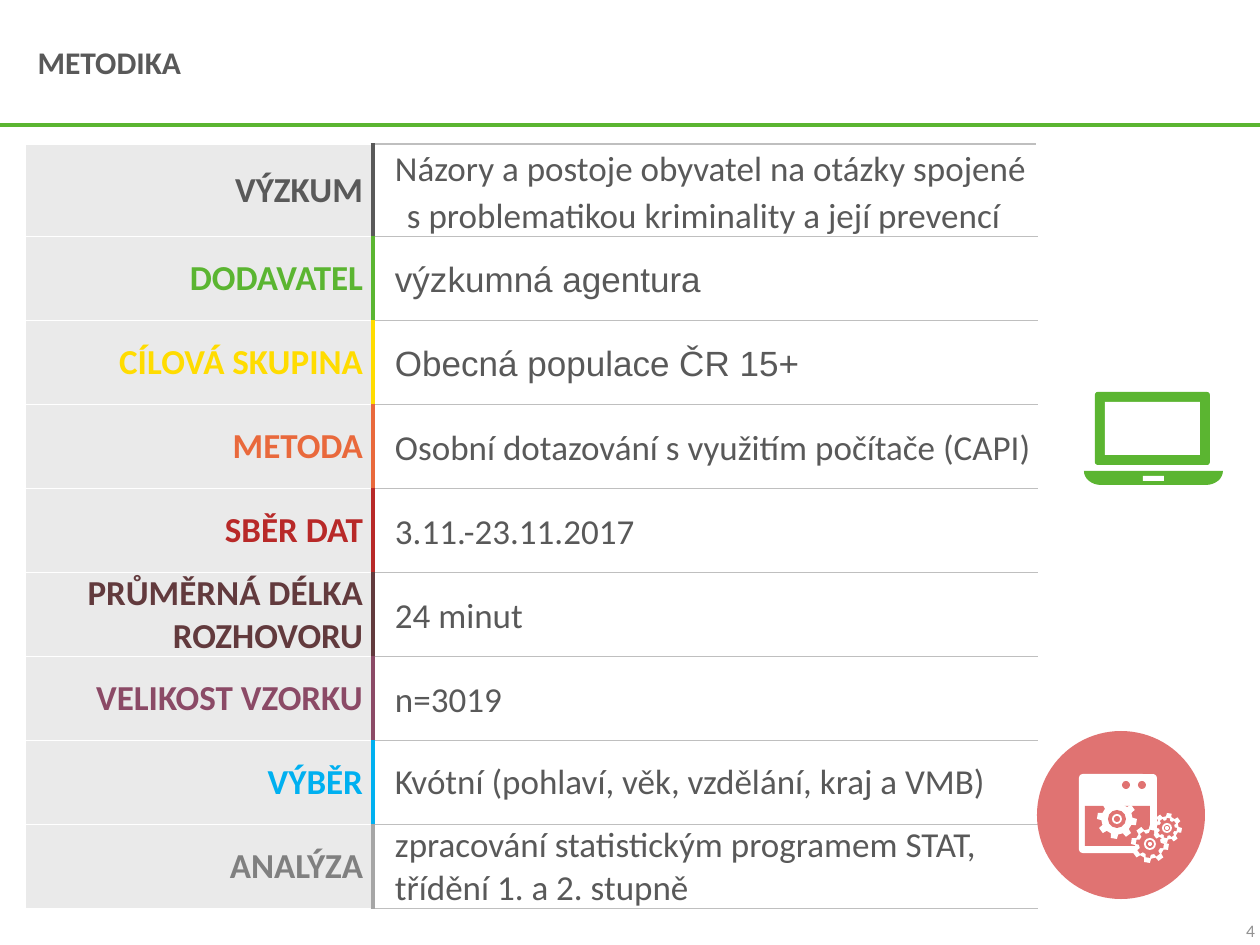
from math import cos, pi, sin

from lxml import etree
from pptx import Presentation
from pptx.dml.color import RGBColor
from pptx.enum.shapes import MSO_CONNECTOR, MSO_SHAPE
from pptx.enum.text import MSO_ANCHOR, PP_ALIGN
from pptx.oxml.ns import qn
from pptx.util import Pt

PX = 914400 // 126
LEFT, RIGHT = PP_ALIGN.LEFT, PP_ALIGN.RIGHT
MIDDLE = MSO_ANCHOR.MIDDLE
OVAL, RECT, ROUND = MSO_SHAPE.OVAL, MSO_SHAPE.RECTANGLE, MSO_SHAPE.ROUNDED_RECTANGLE

DARK = RGBColor(0x59, 0x59, 0x59)
GREEN = RGBColor(0x5B, 0xB5, 0x31)
YELLOW = RGBColor(0xFF, 0xDC, 0x00)
ORANGE = RGBColor(0xE9, 0x69, 0x3C)
RED = RGBColor(0xB8, 0x29, 0x28)
BROWN = RGBColor(0x62, 0x3A, 0x3D)
PLUM = RGBColor(0x8B, 0x4A, 0x66)
BLUE = RGBColor(0x00, 0xB0, 0xF0)
GRAY = RGBColor(0x80, 0x80, 0x80)
SILVER = RGBColor(0xA6, 0xA6, 0xA6)
RULE = RGBColor(0xBF, 0xBF, 0xBF)
PALE = RGBColor(0xEA, 0xEA, 0xEA)
NUMBER = RGBColor(0x93, 0x93, 0x93)
CORAL = RGBColor(0xE0, 0x73, 0x72)
WHITE = RGBColor(0xFF, 0xFF, 0xFF)

TITLE = "METODIKA"
PAGE = "4"
HANG = dict(indent=24, hang=12, spacing=1.1)
SANS = dict(HANG, font="Arial")
# label, label colour, bar colour, value, value format
ROWS = [
    ("VÝZKUM", DARK, DARK, "Názory a postoje obyvatel na otázky spojené "
     "s problematikou kriminality a její prevencí", HANG),
    ("DODAVATEL", GREEN, GREEN, "výzkumná agentura", SANS),
    ("CÍLOVÁ SKUPINA", YELLOW, YELLOW, "Obecná populace ČR 15+", SANS),
    ("METODA", ORANGE, ORANGE, "Osobní dotazování s využitím počítače (CAPI)", HANG),
    ("SBĚR DAT", RED, RED, "3.11.-23.11.2017", HANG),
    ("PRŮMĚRNÁ DÉLKA ROZHOVORU", BROWN, BROWN, "24 minut", HANG),
    ("VELIKOST VZORKU", PLUM, PLUM, "n=3019", HANG),
    ("VÝBĚR", BLUE, BLUE, "Kvótní (pohlaví, věk, vzdělání, kraj a VMB)",
     dict(indent=24, hang=12)),
    ("ANALÝZA", GRAY, SILVER, "zpracování statistickým programem STAT, "
     "třídění 1. a 2. stupně", dict(indent=12)),
]
WIDTHS = (348, 664)
STEP = 84

# centre x, centre y, tooth radius, body radius, ring radius, hole radius, dot radius
SMALL = [(1150, 844, 19, 14, 6, 4, 2), (1167, 828, 15, 10, 5, 3, 2)]


def write(frame, text, size=20, color=DARK, bold=False, font="Calibri", align=LEFT,
          spacing=None, indent=0, hang=0):
    para = frame.paragraphs[0]
    para.alignment = align
    if spacing:
        para.line_spacing = spacing
    if indent:
        props = para._p.get_or_add_pPr()
        props.set("marL", str(indent * PX))
        props.set("indent", str(-hang * PX))
    run = para.add_run()
    run.text = text
    run.font.size, run.font.name, run.font.bold = Pt(size), font, bold
    run.font.color.rgb = color


def inset(box, left=0, right=0):
    box.margin_left, box.margin_right = left * PX, right * PX
    box.margin_top = box.margin_bottom = 0


def border(cell, **sides):
    props = cell._tc.get_or_add_tcPr()
    for side in "LRTB":
        if side in sides:
            color, width = sides[side]
            line = etree.SubElement(props, qn("a:ln" + side), w=str(Pt(width)))
            fill = etree.SubElement(line, qn("a:solidFill"))
            etree.SubElement(fill, qn("a:srgbClr"), val=str(color))


def paint(shape, color):
    shape.shadow.inherit = False
    shape.fill.solid()
    shape.fill.fore_color.rgb = color
    shape.line.fill.background()
    return shape


def block(kind, x, y, w, h, color):
    return paint(shapes.add_shape(kind, x * PX, y * PX, w * PX, h * PX), color)


def disc(x, y, r, color):
    block(OVAL, x - r, y - r, 2 * r, 2 * r, color)


def outline(points, color):
    spots = [(round(x * PX), round(y * PX)) for x, y in points]
    pen = shapes.build_freeform(*spots[0])
    pen.add_line_segments(spots[1:], close=True)
    paint(pen.convert_to_shape(), color)


def gear(x, y, r, color, teeth=8):
    points = []
    for i in range(teeth):
        for part, size in ((-0.3, 0.78), (-0.2, 1), (0.2, 1), (0.3, 0.78)):
            turn = 2 * pi * (i + part + 0.2) / teeth
            points.append((x + r * size * cos(turn), y + r * size * sin(turn)))
    outline(points, color)


deck = Presentation()
deck.slide_width, deck.slide_height = 1260 * PX, 945 * PX
slide = deck.slides.add_slide(deck.slide_layouts[5])
shapes = slide.shapes

# Title, rule below it and page number
title = shapes.title
title.left, title.top, title.width, title.height = 25 * PX, 6 * PX, 1067 * PX, 118 * PX
title.text_frame.vertical_anchor = MIDDLE
write(title.text_frame, TITLE, size=18, bold=True, spacing=0.8)

rule = shapes.add_connector(MSO_CONNECTOR.STRAIGHT, 0, 125 * PX, 1260 * PX, 125 * PX)
rule.line.color.rgb, rule.line.width = GREEN, Pt(2)
etree.SubElement(rule._element.spPr, qn("a:effectLst"))

page = shapes.add_textbox(1121 * PX, 920 * PX, 134 * PX, 21 * PX).text_frame
page.word_wrap = True
inset(page)
write(page, PAGE, size=10, color=NUMBER, align=RIGHT)

# Table of labels and values
table = shapes.add_table(len(ROWS), 2, 25 * PX, 144 * PX, sum(WIDTHS) * PX,
                         len(ROWS) * STEP * PX).table
table.first_row = table.horz_banding = False
for col, width in zip(table.columns, WIDTHS):
    col.width = width * PX
for row, (label, color, bar, value, style) in zip(table.rows, ROWS):
    row.height = STEP * PX
    head, body = row.cells
    head.vertical_anchor = body.vertical_anchor = MIDDLE
    inset(head, left=5, right=10)
    inset(body, left=10)
    border(head, R=(bar, 3), T=(WHITE, 1), B=(WHITE, 1))
    border(body, L=(bar, 3), T=(RULE, 0.75), B=(RULE, 0.75))
    head.fill.solid()
    head.fill.fore_color.rgb = PALE
    body.fill.background()
    write(head.text_frame, label, color=color, bold=True, align=RIGHT)
    write(body.text_frame, value, **style)

# Round icon: window with gears
disc(1121, 815, 84, CORAL)
block(ROUND, 1079, 774, 78, 79, WHITE).adjustments[0] = 0.05
block(RECT, 1085, 806, 65, 40, CORAL)
for x in (1126, 1142):
    disc(x, 785, 4, CORAL)
gear(1117, 819, 20, WHITE)
for r, color in ((9, CORAL), (5, WHITE), (3, CORAL)):
    disc(1117, 819, r, color)
for x, y, r, inner, ring, hole, dot in SMALL:
    gear(x, y, r, WHITE)
    gear(x, y, inner, CORAL)
    for size, color in ((ring, WHITE), (hole, CORAL), (dot, WHITE)):
        disc(x, y, size, color)

# Laptop icon: screen, then base with rounded lower corners
block(ROUND, 1095, 392, 115, 73, GREEN).adjustments[0] = 0.04
block(RECT, 1105, 402, 95, 53, WHITE)
arc = [(17 * cos(i * pi / 16), 14 * sin(i * pi / 16)) for i in range(9)]
outline([(1206 + x, 471 + y) for x, y in arc]
        + [(1101 - x, 471 + y) for x, y in reversed(arc)], GREEN)
block(RECT, 1143, 476, 21, 5, WHITE)

deck.save("out.pptx")
